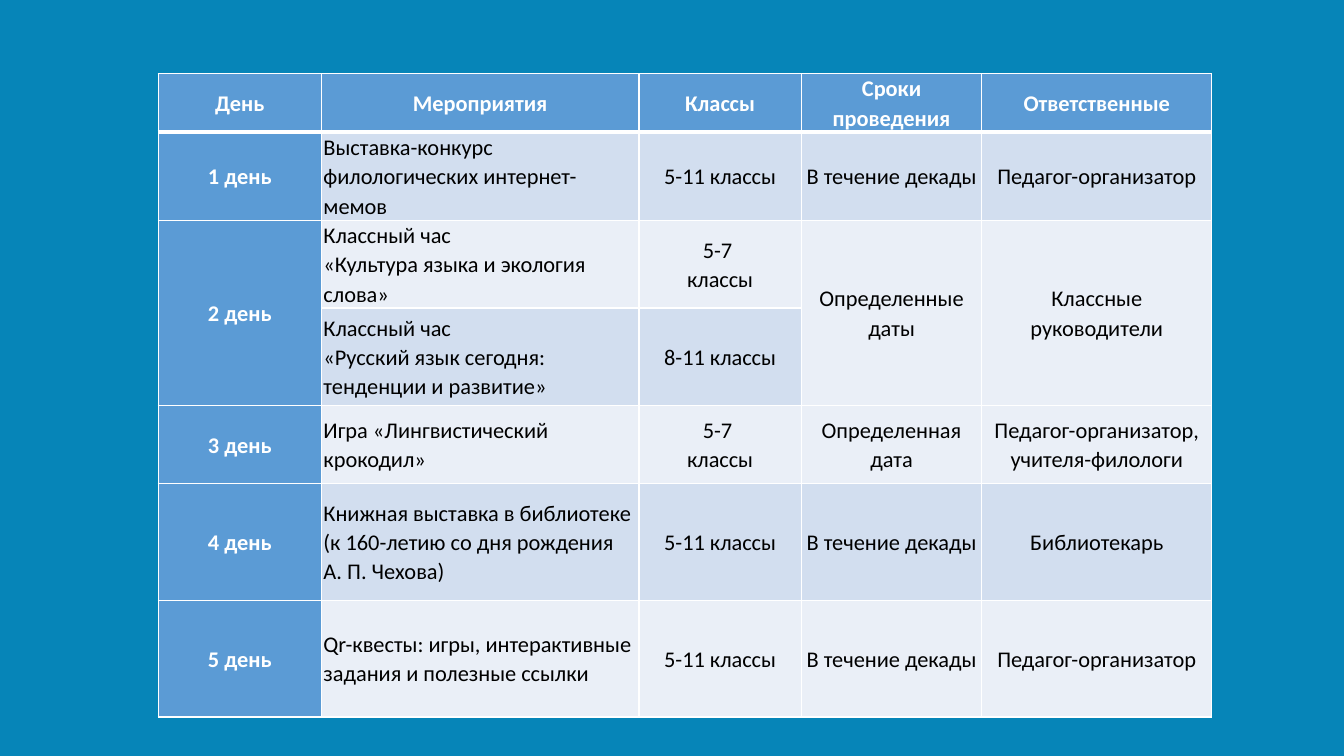
from dataclasses import dataclass

from lxml.etree import SubElement
from pptx import Presentation
from pptx.dml.color import RGBColor
from pptx.enum.text import MSO_ANCHOR, PP_ALIGN
from pptx.oxml.ns import qn
from pptx.slide import Slide
from pptx.table import Table, _Cell
from pptx.util import Pt


@dataclass(frozen=True)
class Theme:
    background: str = "0685B8"
    accent: str = "5B9BD5"
    odd_band: str = "D2DEEF"
    even_band: str = "EAEFF7"
    light: str = "FFFFFF"
    dark: str = "000000"
    font: str = "Calibri"
    size: float = 16
    line_spacing: float = 1.07
    side_margin: float = 1.5
    thin_border: float = 1
    thick_border: float = 3


@dataclass(frozen=True)
class PlanRow:
    height: float
    day: str = ""
    event: str = ""
    classes: str = ""
    dates: str = ""
    people: str = ""

    def texts(self) -> tuple[str, ...]:
        return self.day, self.event, self.classes, self.dates, self.people


THEME = Theme()
LEFT, TOP = 113, 52.6
COLUMN_WIDTHS = (116.6, 226.8, 116, 129, 164.2)
EVENT_COLUMN = 1
MERGED_ROWS = (2, 3)
MERGED_COLUMNS = (0, 3, 4)

# A line break in a text starts a new paragraph
PLAN = (
    PlanRow(41.8, "День", "Мероприятия", "Классы", "Сроки проведения", "Ответственные"),
    PlanRow(55.4, "1 день", "Выставка-конкурс филологических интернет-мемов",
            "5-11 классы", "В течение декады", "Педагог-организатор"),
    PlanRow(41.8, "2 день", "Классный час\n«Культура языка и экология слова»",
            "5-7 \nклассы", "Определенные даты", "Классные руководители"),
    PlanRow(69.8, event="Классный час\n«Русский язык сегодня: тенденции и развитие»",
            classes="8-11 классы"),
    PlanRow(55.4, "3 день", "Игра «Лингвистический крокодил»", "5-7 \nклассы",
            "Определенная дата", "Педагог-организатор, учителя-филологи"),
    PlanRow(83.5, "4 день",
            "Книжная выставка в библиотеке (к 160-летию со дня рождения А. П. Чехова)",
            "5-11 классы", "В течение декады", "Библиотекарь"),
    PlanRow(83.5, "5 день", "Qr-квесты: игры, интерактивные задания и полезные ссылки",
            "5-11 классы", "В течение декады", "Педагог-организатор"),
)


def add_borders(cell: _Cell, row: int) -> None:
    """Draw thin lines, with a thick one between the header and the body."""
    properties = cell._tc.get_or_add_tcPr()
    for side in ("L", "R", "T", "B"):
        under_header = (row, side) in ((0, "B"), (1, "T"))
        width = THEME.thick_border if under_header else THEME.thin_border
        line = SubElement(properties, qn(f"a:ln{side}"), w=str(Pt(width)))
        fill = SubElement(line, qn("a:solidFill"))
        SubElement(fill, qn("a:srgbClr"), val=THEME.light)


def write_text(cell: _Cell, text: str, heading: bool, align: PP_ALIGN) -> None:
    for index, line in enumerate(text.split("\n")):
        frame = cell.text_frame
        para = frame.add_paragraph() if index else frame.paragraphs[0]
        para.alignment = align
        para.line_spacing = THEME.line_spacing
        span = para.add_run()
        span.text = line
        span.font.name = THEME.font
        span.font.size = Pt(THEME.size)
        span.font.bold = heading
        span.font.color.rgb = RGBColor.from_string(THEME.light if heading else THEME.dark)


def format_cell(cell: _Cell, row: int, column: int, text: str) -> None:
    heading = row == 0 or column == 0
    band = THEME.odd_band if row % 2 else THEME.even_band
    add_borders(cell, row)
    cell.fill.solid()
    cell.fill.fore_color.rgb = RGBColor.from_string(THEME.accent if heading else band)
    cell.vertical_anchor = MSO_ANCHOR.MIDDLE
    cell.margin_left = cell.margin_right = Pt(THEME.side_margin)
    cell.margin_top = cell.margin_bottom = Pt(0)
    if text:
        is_event = column == EVENT_COLUMN and not heading
        write_text(cell, text, heading, PP_ALIGN.LEFT if is_event else PP_ALIGN.CENTER)


def add_plan(page: Slide) -> Table:
    height = sum(entry.height for entry in PLAN)
    table = page.shapes.add_table(len(PLAN), len(COLUMN_WIDTHS), Pt(LEFT), Pt(TOP),
                                  Pt(sum(COLUMN_WIDTHS)), Pt(height)).table
    table.horz_banding = False
    for column, width in enumerate(COLUMN_WIDTHS):
        table.columns[column].width = Pt(width)
    for row, entry in enumerate(PLAN):
        table.rows[row].height = Pt(entry.height)
        for column, text in enumerate(entry.texts()):
            format_cell(table.cell(row, column), row, column, text)

    # The second day spans two events
    first, last = MERGED_ROWS
    for column in MERGED_COLUMNS:
        table.cell(first, column).merge(table.cell(last, column))
    return table


def main() -> None:
    deck = Presentation()
    deck.slide_width, deck.slide_height = Pt(960), Pt(540)

    # Blank layout: the slide has no title
    page = deck.slides.add_slide(deck.slide_layouts[6])
    page.background.fill.solid()
    page.background.fill.fore_color.rgb = RGBColor.from_string(THEME.background)

    add_plan(page)
    deck.save("out.pptx")


if __name__ == "__main__":
    main()
